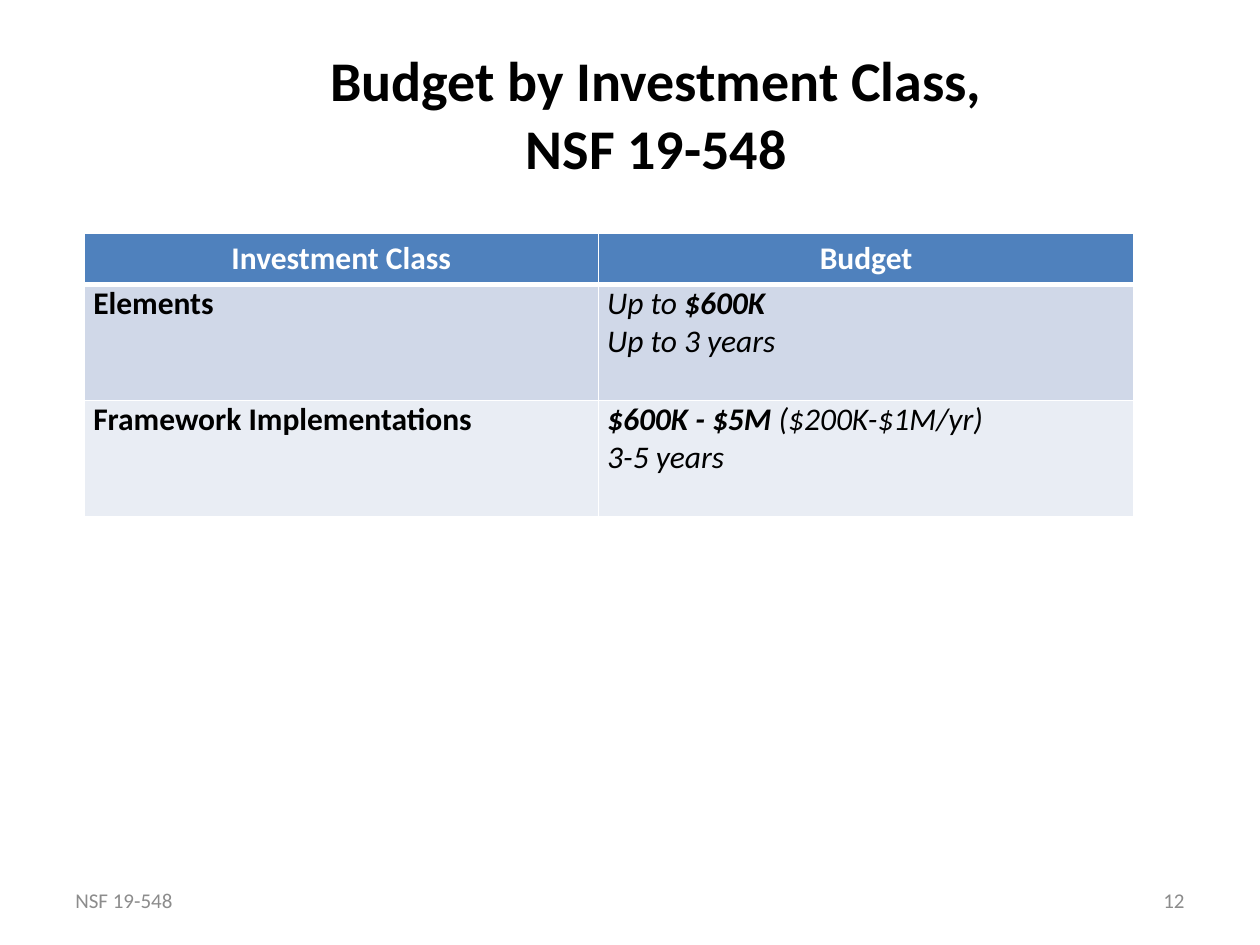
from lxml.etree import SubElement
from pptx import Presentation
from pptx.dml.color import RGBColor as Color
from pptx.enum.text import MSO_ANCHOR as Anchor, PP_ALIGN as Align
from pptx.oxml.ns import qn
from pptx.util import Cm, Pt

COLORS = {
    "text": "000000",
    "white": "FFFFFF",
    "header": "4F81BD",
    "odd": "D0D8E8",
    "even": "E9EDF4",
    "footer": "8C8C8C",
}


def write(para, text, size=18, color="text", bold=False, italic=False, align=Align.LEFT):
    para.alignment = align
    for index, line in enumerate(text.split("\n")):
        if index:
            para.add_line_break()
        span = para.add_run()
        span.text = line
        font = span.font
        font.name = "Calibri"
        font.size = Pt(size)
        font.bold = bold
        font.italic = italic
        font.color.rgb = Color.from_string(COLORS[color])


class SlideBuilder:
    def __init__(self, deck):
        self.page = deck.slides.add_slide(deck.slide_layouts[5])

    def title(self, text, left, top, width, height):
        box = self.page.shapes.title
        box.left, box.top, box.width, box.height = map(Cm, (left, top, width, height))
        box.text_frame.vertical_anchor = Anchor.MIDDLE
        write(box.text_frame.paragraphs[0], text, size=32, bold=True, align=Align.CENTER)

    def footer(self, text, left, align):
        box = self.page.shapes.add_textbox(Cm(left), Cm(17.65), Cm(5.93), Cm(1.01))
        frame = box.text_frame
        frame.word_wrap = True
        frame.vertical_anchor = Anchor.MIDDLE
        write(frame.paragraphs[0], text, size=12, color="footer", align=align)

    def borders(self, cell, **widths):
        properties = cell._tc.get_or_add_tcPr()
        for side in "LRTB":
            line = SubElement(properties, qn(f"a:ln{side}"), w=str(Pt(widths.get(side, 1))))
            fill = SubElement(line, qn("a:solidFill"))
            SubElement(fill, qn("a:srgbClr"), val=COLORS["white"])

    def paint(self, cell, color):
        cell.fill.solid()
        cell.fill.fore_color.rgb = Color.from_string(COLORS[color])

    def table(self, headers, rows, left, top, widths, heights):
        grid = self.page.shapes.add_table(
            len(heights), len(widths), Cm(left), Cm(top), Cm(sum(widths)), Cm(sum(heights))
        ).table
        for column, width in zip(grid.columns, widths):
            column.width = Cm(width)
        for row, height in zip(grid.rows, heights):
            row.height = Cm(height)

        fills = ["header", "odd", "even", "white"]
        heavy_sides = {0: {"B": 3}, 1: {"T": 3}}
        for index, (row, fill) in enumerate(zip(grid.rows, fills)):
            for cell in row.cells:
                self.borders(cell, **heavy_sides.get(index, {}))
                self.paint(cell, fill)

        for column, header in enumerate(headers):
            write(grid.cell(0, column).text_frame.paragraphs[0], header,
                  color="white", bold=True, align=Align.CENTER)
        for index, row in enumerate(rows, start=1):
            for column, lines in enumerate(row):
                self.body_cell(grid.cell(index, column), lines, italic=column > 0)

    def body_cell(self, cell, lines, italic):
        cell.margin_left = cell.margin_right = Cm(0.18)
        cell.margin_top = cell.margin_bottom = 0
        frame = cell.text_frame
        for index, line in enumerate(lines):
            para = frame.add_paragraph() if index else frame.paragraphs[0]
            for text, bold in line:
                write(para, text, bold=bold, italic=italic)


def main():
    deck = Presentation()
    deck.slide_width, deck.slide_height = Cm(25.4), Cm(19.05)
    builder = SlideBuilder(deck)
    builder.title("Budget by Investment Class,\nNSF 19-548", 1.7, 0.69, 23.06, 3.18)
    builder.table(
        headers=["Investment Class", "Budget"],
        rows=[
            (
                [[("Elements", True)]],
                [[("Up to ", False), ("$600K", True)], [("Up to 3 years", False)]],
            ),
            (
                [[("Framework Implementations", True)]],
                [[("$600K - $5M ", True), ("($200K-$1M/yr)", False)], [("3-5 years", False)]],
            ),
        ],
        left=1.7, top=4.7,
        widths=[10.36, 10.8],
        heights=[0.94, 2.34, 2.34, 0.89],
    )
    builder.footer("12", 18.2, Align.RIGHT)
    builder.footer("NSF 19-548", 1.27, Align.LEFT)
    deck.save("out.pptx")


if __name__ == "__main__":
    main()
